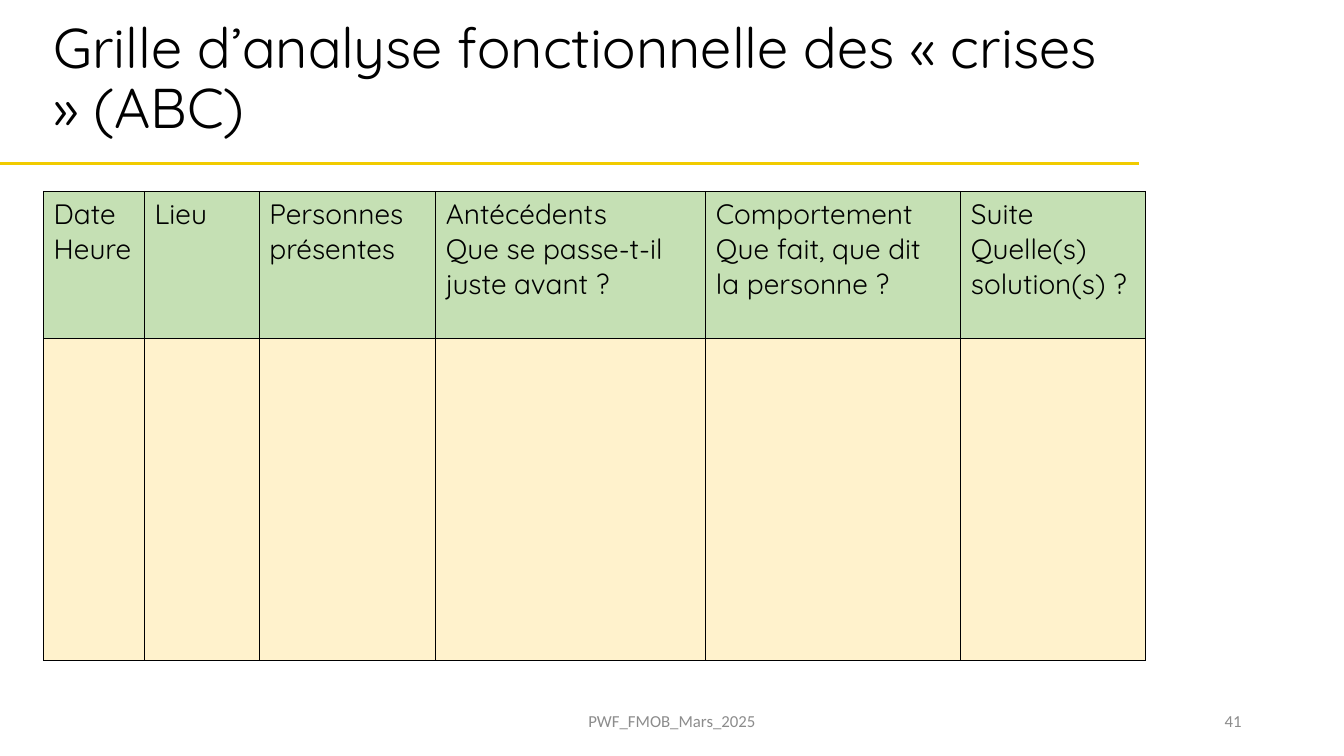
from dataclasses import dataclass

from lxml import etree
from pptx import Presentation
from pptx import util as u
from pptx.dml.color import RGBColor
from pptx.enum import shapes, text
from pptx.oxml import ns


@dataclass(frozen=True)
class Theme:
    heading_font: str = "Quicksand"
    footer_font: str = "Calibri"
    title_size: int = 40
    table_size: int = 20
    footer_size: int = 12
    rule_width: float = 2.25
    border_width: float = 1
    ink: str = "000000"
    muted: str = "8C8C8C"
    rule: str = "F1CB00"
    header_fill: str = "C5E0B4"
    body_fill: str = "FFF2CC"


class SlideBuilder:
    """Places elements on a grid of 80 columns by 45 rows."""

    COLUMNS, ROWS = 80, 45

    def __init__(self, presentation, theme):
        self.theme = theme
        self.column = presentation.slide_width / self.COLUMNS
        self.row = presentation.slide_height / self.ROWS
        self.slide = presentation.slides.add_slide(presentation.slide_layouts[6])

    def across(self, columns):
        return u.Emu(round(columns * self.column))

    def down(self, rows):
        return u.Emu(round(rows * self.row))

    def box(self, left, top, width, height):
        return self.across(left), self.down(top), self.across(width), self.down(height)

    def add_words(self, paragraph, words, font, size, color):
        run = paragraph.add_run()
        run.text = words
        run.font.name = font
        run.font.size = u.Pt(size)
        run.font.color.rgb = RGBColor.from_string(color)

    def rule(self, left, right, top):
        y = self.down(top)
        line = self.slide.shapes.add_connector(
            shapes.MSO_CONNECTOR.STRAIGHT, self.across(left), y, self.across(right), y)
        line.line.color.rgb = RGBColor.from_string(self.theme.rule)
        line.line.width = u.Pt(self.theme.rule_width)
        etree.SubElement(line._element.spPr, ns.qn("a:effectLst"))

    def text_box(self, place, words, font, size, color,
                 align=text.PP_ALIGN.LEFT, anchor=text.MSO_ANCHOR.MIDDLE, spacing=1.0):
        frame = self.slide.shapes.add_textbox(*self.box(*place)).text_frame
        frame.word_wrap = True
        frame.vertical_anchor = anchor
        paragraph = frame.paragraphs[0]
        paragraph.alignment = align
        paragraph.line_spacing = spacing
        self.add_words(paragraph, words, font, size, color)

    def footer(self, place, words, align):
        theme = self.theme
        self.text_box(place, words, theme.footer_font, theme.footer_size, theme.muted, align)

    def borders(self, cell):
        properties = cell._tc.get_or_add_tcPr()
        for side in ("lnL", "lnR", "lnT", "lnB"):
            line = etree.SubElement(properties, ns.qn(f"a:{side}"),
                                    w=str(u.Pt(self.theme.border_width)))
            fill = etree.SubElement(line, ns.qn("a:solidFill"))
            etree.SubElement(fill, ns.qn("a:srgbClr"), val=self.theme.ink)

    def table(self, left, top, headers, widths, heights):
        theme = self.theme
        place = self.box(left, top, sum(widths), sum(heights))
        table = self.slide.shapes.add_table(len(heights), len(widths), *place).table
        for column, width in zip(table.columns, widths):
            column.width = self.across(width)
        for row, height in zip(table.rows, heights):
            row.height = self.down(height)

        # Borders and fills
        for row, color in zip(table.rows, (theme.header_fill, theme.body_fill)):
            for cell in row.cells:
                self.borders(cell)
                cell.fill.solid()
                cell.fill.fore_color.rgb = RGBColor.from_string(color)

        # Header wording, one paragraph per entry
        for cell, entries in zip(table.rows[0].cells, headers):
            frame = cell.text_frame
            for index, entry in enumerate(entries):
                paragraph = frame.add_paragraph() if index else frame.paragraphs[0]
                self.add_words(paragraph, entry, theme.heading_font, theme.table_size, theme.ink)


def main():
    presentation = Presentation()
    presentation.slide_width = u.Inches(13.33)
    presentation.slide_height = u.Inches(7.5)
    theme = Theme()
    builder = SlideBuilder(presentation, theme)

    # Title and rule
    builder.rule(0, 67.8, 9.72)
    builder.text_box((2.6, 0.9, 64.5, 7.92),
                     "Grille d’analyse fonctionnelle des « crises » (ABC)",
                     theme.heading_font, theme.title_size, theme.ink,
                     anchor=text.MSO_ANCHOR.TOP, spacing=0.9)

    # Analysis grid
    headers = [
        ["Date", "Heure"],
        ["Lieu"],
        ["Personnes présentes"],
        ["Antécédents", "Que se passe-t-il juste avant ?"],
        ["Comportement Que fait, que dit la personne ?"],
        ["Suite", "Quelle(s) solution(s) ?"],
    ]
    builder.table(2.6, 11.4, headers,
                  widths=(6, 6.84, 10.5, 16.08, 15.18, 10.98), heights=(8.76, 19.14))

    # Footer
    builder.footer((26.5, 41.7, 27, 2.4), "PWF_FMOB_Mars_2025", text.PP_ALIGN.CENTER)
    builder.footer((56.5, 41.7, 18, 2.4), "41", text.PP_ALIGN.RIGHT)

    presentation.save("out.pptx")


if __name__ == "__main__":
    main()
